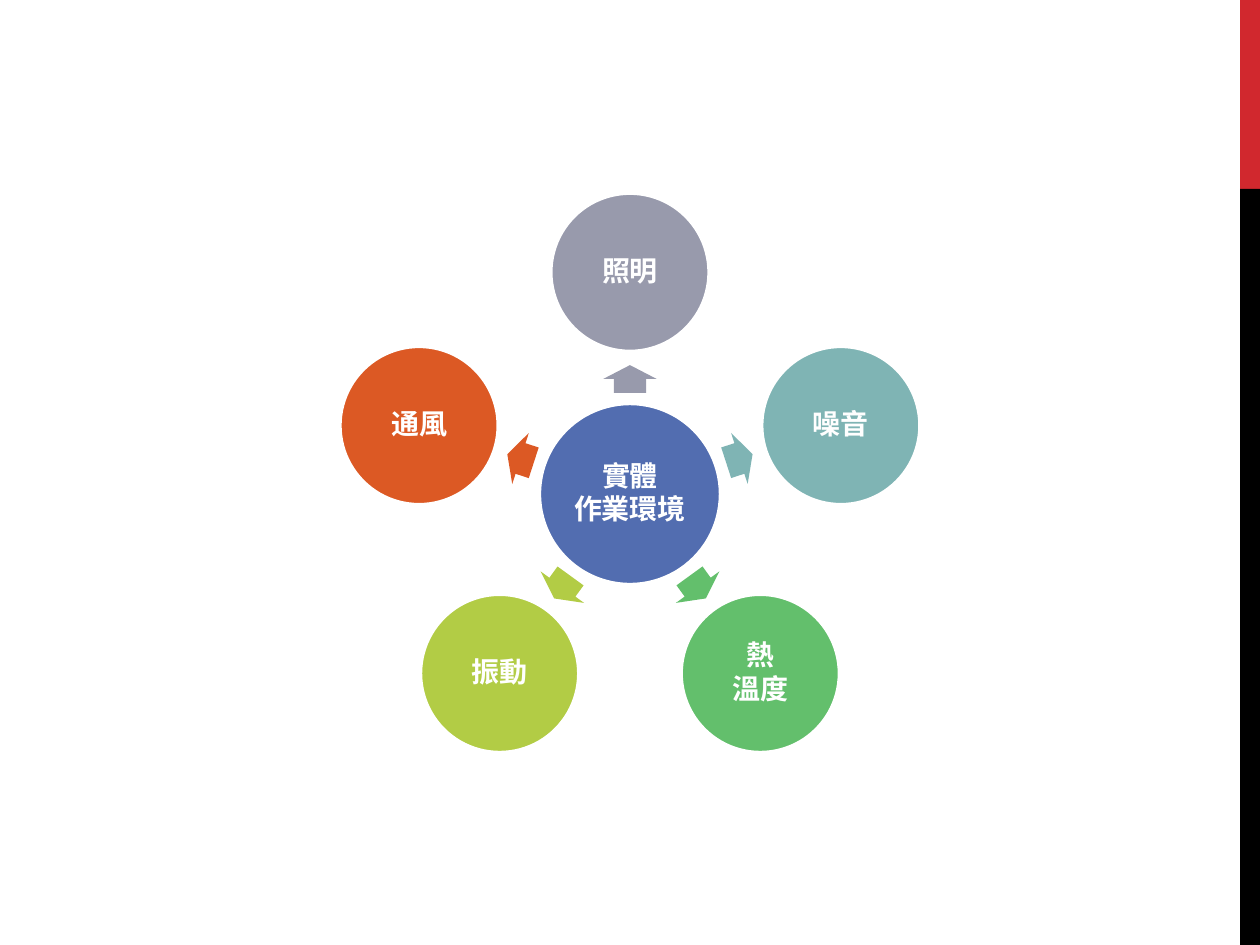
from math import cos, radians, sin

from lxml import etree
from pptx import Presentation
from pptx.dml.color import RGBColor
from pptx.enum.shapes import MSO_SHAPE
from pptx.enum.text import MSO_ANCHOR, PP_ALIGN
from pptx.oxml.ns import qn
from pptx.util import Cm, Pt

OVAL, ARROW, RECT = MSO_SHAPE.OVAL, MSO_SHAPE.RIGHT_ARROW, MSO_SHAPE.RECTANGLE
MIDDLE, CENTER = MSO_ANCHOR.MIDDLE, PP_ALIGN.CENTER
FONT = "Noto Sans CJK SC"
COLORS = {
    "white": "FFFFFF", "black": "000000", "red": "D1282E", "blue": "526DB0",
    "gray": "989AAC", "teal": "7FB4B4", "green": "63BF6C", "lime": "B2CC45",
    "orange": "DC5924",
}

prs = Presentation()
prs.slide_width, prs.slide_height = Cm(25.4), Cm(19.05)
slide = prs.slides.add_slide(prs.slide_layouts[6])


def add_block(kind, left, top, width, height, color, outline=None):
    block = slide.shapes.add_shape(kind, Cm(left), Cm(top), Cm(width), Cm(height))
    block.shadow.inherit = False
    block.fill.solid()
    block.fill.fore_color.rgb = RGBColor.from_string(COLORS[color])
    if outline:
        block.line.color.rgb = RGBColor.from_string(COLORS[outline])
        block.line.width = Pt(2.25)
    else:
        block.line.fill.background()
    return block


def write_text(block, text, size=16, color="white", bold=True, inset=0.05):
    frame = block.text_frame
    frame.word_wrap = True
    frame.vertical_anchor = MIDDLE
    frame.margin_left = frame.margin_right = Cm(inset)
    frame.margin_top = frame.margin_bottom = Cm(inset)
    for index, line in enumerate(text.split("\n")):
        paragraph = frame.add_paragraph() if index else frame.paragraphs[0]
        paragraph.alignment = CENTER
        paragraph.line_spacing = 0.9
        paragraph.space_after = Pt(2)
        run = paragraph.add_run()
        run.text = line
        run.font.size = Pt(size)
        run.font.bold = bold
        run.font.color.rgb = RGBColor.from_string(COLORS[color])
        run.font.name = FONT
        etree.SubElement(run._r.get_or_add_rPr(), qn("a:ea"), typeface=FONT)


add_block(RECT, 25, 0, 0.4, 3.81, "red")
add_block(RECT, 25, 3.81, 0.4, 15.24, "black")

center_x, center_y = 12.7, 9.96
hub_size, factor_size = 3.66, 3.2
arrow_length, arrow_width = 0.56, 1.08
factor_orbit, arrow_orbit = 4.47, 2.32

hub = add_block(OVAL, center_x - hub_size / 2, center_y - hub_size / 2,
                hub_size, hub_size, "blue", outline="white")
write_text(hub, "實體\n作業環境")

factors = [("照明", "gray"), ("噪音", "teal"), ("熱\n溫度", "green"),
           ("振動", "lime"), ("通風", "orange")]

for position, (label, color) in enumerate(factors):
    angle = (270 + position * 360 / len(factors)) % 360
    across, down = cos(radians(angle)), sin(radians(angle))

    pointer = add_block(ARROW, center_x + arrow_orbit * across - arrow_length / 2,
                        center_y + arrow_orbit * down - arrow_width / 2,
                        arrow_length, arrow_width, color)
    pointer.rotation = angle
    pointer.adjustments[0] = 0.6
    pointer.adjustments[1] = 0.5

    factor = add_block(OVAL, center_x + factor_orbit * across - factor_size / 2,
                       center_y + factor_orbit * down - factor_size / 2,
                       factor_size, factor_size, color, outline="white")
    write_text(factor, label)

prs.save("out.pptx")
